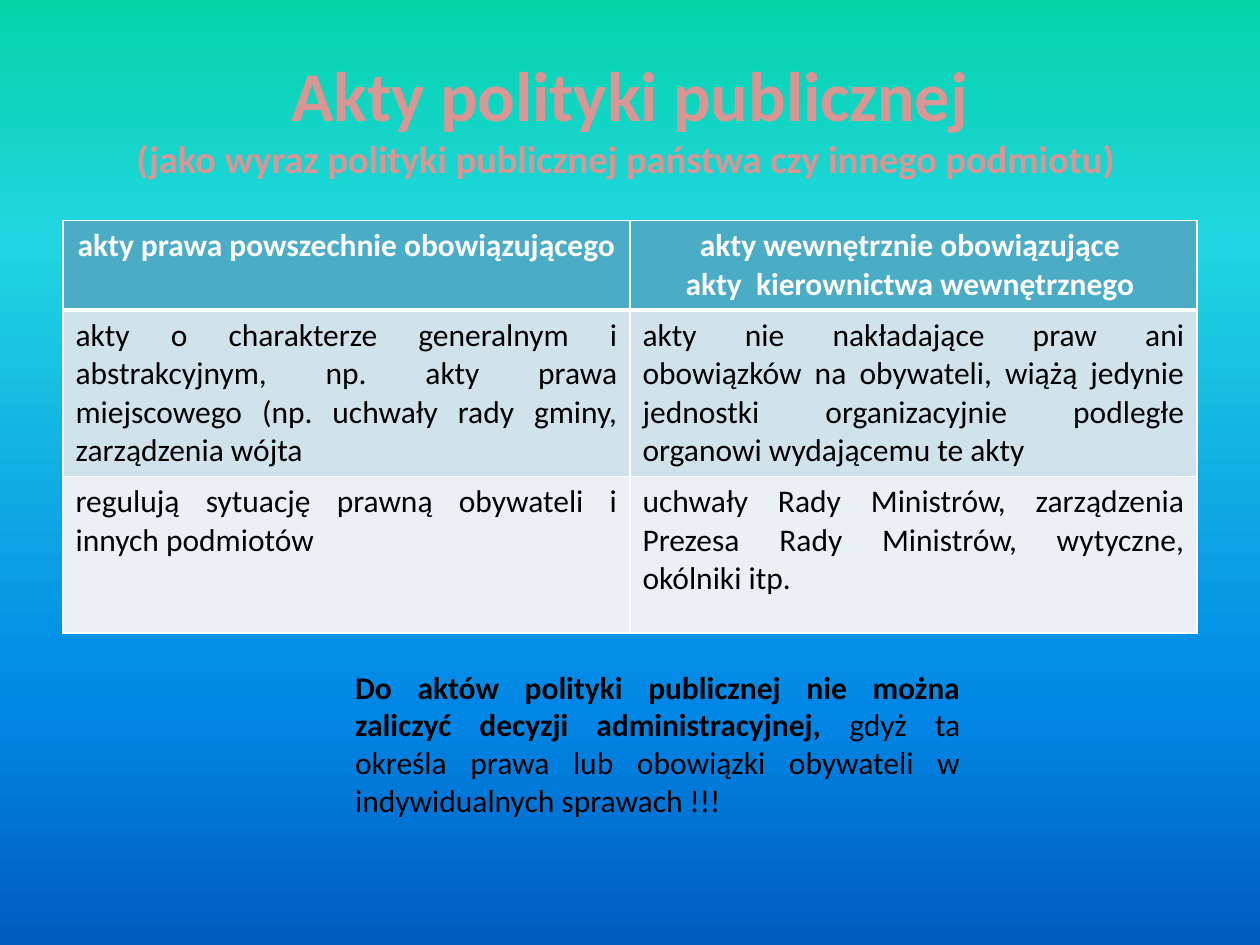
from lxml.etree import SubElement
from pptx import Presentation
from pptx.dml.color import RGBColor
from pptx.enum.text import MSO_ANCHOR, MSO_AUTO_SIZE, PP_ALIGN
from pptx.oxml.ns import qn
from pptx.util import Pt

FONT = "Calibri"
BACKGROUND_STOPS = [(0, "03D4A8"), (25, "21D6E0"), (75, "0087E6"), (100, "005CBF")]
ROW_FILLS = ["4BACC6", "D0E3EA", "E9F1F5"]
ROW_HEIGHTS = [51, 95, 89.5]
ACTS = [
    [
        ["akty prawa powszechnie obowiązującego"],
        ["akty wewnętrznie obowiązujące ", "akty  kierownictwa wewnętrznego "],
    ],
    [
        ["akty o charakterze generalnym i abstrakcyjnym, np. akty prawa miejscowego "
         "(np. uchwały rady gminy, zarządzenia wójta"],
        ["akty nie nakładające praw ani obowiązków na obywateli, wiążą jedynie "
         "jednostki organizacyjnie podległe organowi wydającemu te akty"],
    ],
    [
        ["regulują sytuację prawną obywateli i innych podmiotów"],
        ["uchwały Rady Ministrów, zarządzenia Prezesa Rady Ministrów, wytyczne, "
         "okólniki itp. "],
    ],
]


def color(value):
    """Turn a hex string into a colour."""
    return RGBColor.from_string(value)


def add_run(paragraph, text, size, ink, bold=False):
    """Append one formatted run to a paragraph."""
    run = paragraph.add_run()
    run.text = text
    run.font.name = FONT
    run.font.size = Pt(size)
    run.font.bold = bold
    run.font.color.rgb = color(ink)


def place(shape, left, top, width, height):
    """Move a shape into a box given in points."""
    shape.left, shape.top = Pt(left), Pt(top)
    shape.width, shape.height = Pt(width), Pt(height)


def paint_background(slide):
    """Fill the slide with the vertical gradient."""
    fill = slide.background.fill
    fill.gradient()
    fill.gradient_angle = 270
    stops = next(slide.element.iter(qn("a:gsLst")))
    for stop in list(stops):
        stops.remove(stop)
    for position, value in BACKGROUND_STOPS:
        stop = SubElement(stops, qn("a:gs"), pos=str(position * 1000))
        SubElement(stop, qn("a:srgbClr"), val=value)


def write_title(slide, box):
    """Place the heading and its smaller second line."""
    heading = slide.shapes.title
    place(heading, *box)
    frame = heading.text_frame
    frame.word_wrap = True
    frame.auto_size = MSO_AUTO_SIZE.NONE
    frame.vertical_anchor = MSO_ANCHOR.MIDDLE
    paragraph = frame.paragraphs[0]
    paragraph.alignment = PP_ALIGN.CENTER
    add_run(paragraph, "Akty polityki publicznej", 40, "D99694", True)
    paragraph.add_line_break()
    add_run(paragraph, "(jako wyraz polityki publicznej państwa czy innego podmiotu) ",
            22, "D99694", True)


def border_cell(cell, bottom_width):
    """Draw white lines on the four sides of a cell."""
    properties = cell._tc.get_or_add_tcPr()
    sides = [("a:lnL", 1), ("a:lnR", 1), ("a:lnT", 1), ("a:lnB", bottom_width)]
    for index, (side, width) in enumerate(sides):
        line = SubElement(properties, qn(side), w=str(Pt(width)))
        SubElement(SubElement(line, qn("a:solidFill")), qn("a:srgbClr"), val="FFFFFF")
        properties.insert(index, line)


def add_acts_table(slide, left, top, width):
    """Compare generally binding acts with internal ones."""
    table = slide.shapes.add_table(len(ACTS), len(ACTS[0]), Pt(left), Pt(top),
                                   Pt(width), Pt(sum(ROW_HEIGHTS))).table
    table.horz_banding = False
    for row_index, entries in enumerate(ACTS):
        header = row_index == 0
        table.rows[row_index].height = Pt(ROW_HEIGHTS[row_index])
        for column_index, lines in enumerate(entries):
            cell = table.cell(row_index, column_index)
            cell.fill.solid()
            cell.fill.fore_color.rgb = color(ROW_FILLS[row_index])
            border_cell(cell, 3 if header else 1)
            frame = cell.text_frame
            for line_index, text in enumerate(lines):
                paragraph = frame.add_paragraph() if line_index else frame.paragraphs[0]
                paragraph.alignment = PP_ALIGN.CENTER if header else PP_ALIGN.JUSTIFY
                add_run(paragraph, text, 18, "FFFFFF" if header else "000000", header)


def add_remark(slide, box):
    """Write the closing remark on administrative decisions."""
    frame = slide.shapes.add_textbox(*map(Pt, box)).text_frame
    frame.word_wrap = True
    frame.auto_size = MSO_AUTO_SIZE.SHAPE_TO_FIT_TEXT
    paragraph = frame.paragraphs[0]
    paragraph.alignment = PP_ALIGN.JUSTIFY
    add_run(paragraph, "Do aktów polityki publicznej nie można zaliczyć decyzji "
            "administracyjnej, ", 18, "000000", True)
    add_run(paragraph, "gdyż ta określa prawa lub obowiązki obywateli w "
            "indywidualnych sprawach !!!", 18, "000000")


def main():
    """Build and save the slide."""
    deck = Presentation()
    deck.slide_width, deck.slide_height = Pt(720), Pt(540)
    slide = deck.slides.add_slide(deck.slide_layouts[5])
    paint_background(slide)
    write_title(slide, (36, 21.6, 648, 90))
    add_acts_table(slide, 36, 126, 648)
    add_remark(slide, (195.84, 378, 360, 94.5))
    deck.save("out.pptx")


if __name__ == "__main__":
    main()
